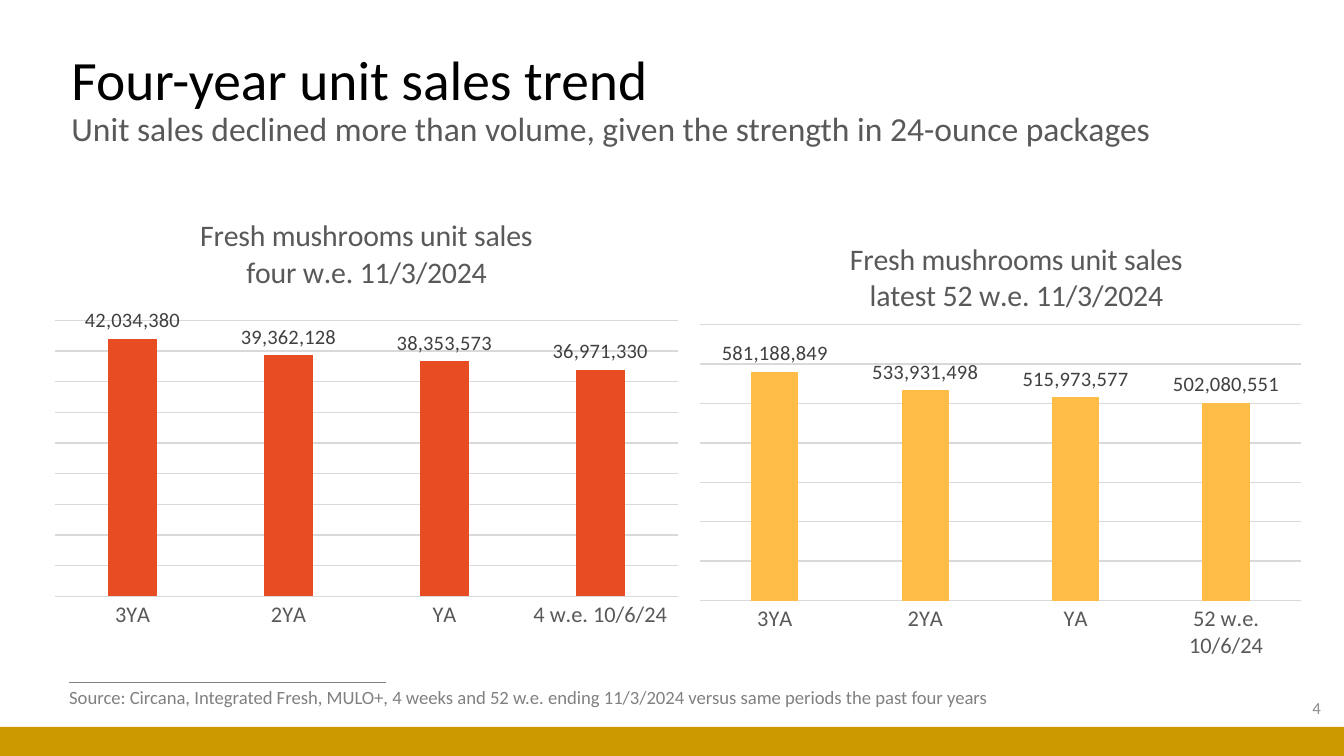
"""Build the four-year unit sales trend slide."""
from lxml import etree
from pptx import Presentation
from pptx import util as u
from pptx.chart.data import CategoryChartData
from pptx.dml.color import RGBColor
from pptx.enum import chart as ch, shapes, text
from pptx.oxml import ns

FONT = "Calibri"
BLACK = RGBColor(0x00, 0x00, 0x00)
DARK = RGBColor(0x40, 0x40, 0x40)
SLATE = RGBColor(0x59, 0x59, 0x59)
GRAY = RGBColor(0x80, 0x80, 0x80)
PALE = RGBColor(0x8C, 0x8C, 0x8C)
GRID = RGBColor(0xD9, 0xD9, 0xD9)
GOLD = RGBColor(0xCC, 0x99, 0x00)
ORANGE = RGBColor(0xE8, 0x4C, 0x22)
AMBER = RGBColor(0xFF, 0xBD, 0x47)
NUMBER = "#,##0"


def px(*lengths):
    """Turn pixel lengths into a list of EMU lengths."""
    return [u.Emu(round(length * 914400 / 134.4)) for length in lengths]


def style_font(font, size, color):
    """Set typeface, size and colour of a font."""
    font.name, font.size, font.bold = FONT, u.Pt(size), False
    font.color.rgb = color


def write(paragraph, words, size, color, align=text.PP_ALIGN.LEFT):
    """Add a formatted run to a paragraph."""
    paragraph.alignment = align
    run = paragraph.add_run()
    run.text = words
    style_font(run.font, size, color)


def style_line(line, color, width):
    """Set colour and width of a line."""
    line.color.rgb = color
    line.width = u.Pt(width)


def add_title(slide, heading, subheading):
    """Fill the title placeholder with a heading and a subheading."""
    title = slide.shapes.title
    title.left, title.top, title.width, title.height = px(58, 48, 1218, 106)
    frame = title.text_frame
    frame.word_wrap = True
    frame.auto_size = text.MSO_AUTO_SIZE.NONE
    frame.vertical_anchor = text.MSO_ANCHOR.MIDDLE
    paragraph = frame.paragraphs[0]
    paragraph.line_spacing = 0.9
    write(paragraph, heading, 29.7, BLACK)
    paragraph.add_line_break()
    write(paragraph, subheading, 18, SLATE)


def add_label(slide, box, words, wrap=True, anchor=text.MSO_ANCHOR.TOP, **style):
    """Add a one-line text box."""
    frame = slide.shapes.add_textbox(*px(*box)).text_frame
    frame.word_wrap = wrap
    frame.vertical_anchor = anchor
    write(frame.paragraphs[0], words, **style)


def add_footer(slide):
    """Draw the footnote rule and the gold band."""
    rule = slide.shapes.add_connector(
        shapes.MSO_CONNECTOR.STRAIGHT, *px(69, 683, 386, 683))
    style_line(rule.line, GRAY, 0.5)
    etree.SubElement(rule._element.spPr, ns.qn("a:effectLst"))
    band = slide.shapes.add_shape(
        shapes.MSO_SHAPE.RECTANGLE, *px(0, 727, 1344, 29))
    band.shadow.inherit = False
    band.fill.solid()
    band.fill.fore_color.rgb = GOLD
    band.line.fill.background()


def place_plot(chart, plot_box):
    """Fix the inner plot area as fractions of the chart."""
    area = chart._chartSpace.chart.plotArea
    for old in area.findall(ns.qn("c:layout")):
        area.remove(old)
    layout = etree.Element(ns.qn("c:layout"))
    manual = etree.SubElement(layout, ns.qn("c:manualLayout"))
    settings = [("layoutTarget", "inner"), ("xMode", "edge"), ("yMode", "edge")]
    for tag, value in settings + list(zip("xywh", plot_box)):
        etree.SubElement(manual, ns.qn(f"c:{tag}")).set("val", str(value))
    area.insert(0, layout)


def add_sales_chart(slide, box, heading, sales, color, top, step, plot_box):
    """Add a column chart of unit sales by period."""
    data = CategoryChartData(number_format=NUMBER)
    data.categories = list(sales)
    data.add_series("Series 1", list(sales.values()))
    chart = slide.shapes.add_chart(
        ch.XL_CHART_TYPE.COLUMN_CLUSTERED, *px(*box), data).chart
    style_font(chart.font, 10, BLACK)
    chart.has_legend = False
    chart.has_title = True
    frame = chart.chart_title.text_frame
    for index, words in enumerate(heading):
        paragraph = frame.add_paragraph() if index else frame.paragraphs[0]
        write(paragraph, words, 16, SLATE, text.PP_ALIGN.CENTER)

    periods = chart.category_axis
    periods.major_tick_mark = ch.XL_TICK_MARK.NONE
    style_font(periods.tick_labels.font, 12, SLATE)
    style_line(periods.format.line, GRID, 0.75)
    units = chart.value_axis
    units.minimum_scale, units.maximum_scale, units.major_unit = 0, top, step
    units.has_major_gridlines = True
    style_line(units.major_gridlines.format.line, GRID, 0.75)
    units.visible = False

    plot = chart.plots[0]
    plot.gap_width, plot.overlap, plot.vary_by_categories = 219, -27, False
    fill = plot.series[0].format.fill
    fill.solid()
    fill.fore_color.rgb = color
    plot.has_data_labels = True
    labels = plot.data_labels
    labels.show_value = True
    labels.position = ch.XL_LABEL_POSITION.OUTSIDE_END
    labels.number_format, labels.number_format_is_linked = NUMBER, False
    style_font(labels.font, 11, DARK)
    place_plot(chart, plot_box)


def main():
    """Assemble and save the slide."""
    deck = Presentation()
    deck.slide_width, deck.slide_height = px(1344, 756)
    slide = deck.slides.add_slide(deck.slide_layouts.get_by_name("Title Only"))
    add_footer(slide)
    add_title(slide, "Four-year unit sales trend",
              "Unit sales declined more than volume, given the strength in "
              "24-ounce packages")
    add_label(slide, (1032, 688, 302, 40), "4", size=9, color=PALE,
              anchor=text.MSO_ANCHOR.MIDDLE, align=text.PP_ALIGN.RIGHT)
    add_label(slide, (56, 679, 954, 36),
              "Source: Circana, Integrated Fresh, MULO+, 4 weeks and 52 w.e. "
              "ending 11/3/2024 versus same periods the past four years",
              wrap=False, size=10, color=GRAY)
    add_sales_chart(
        slide, (54, 196, 625, 445),
        ("Fresh mushrooms unit sales", "four w.e. 11/3/2024"),
        {"3YA": 42034380, "2YA": 39362128, "YA": 38353573,
         "4 w.e. 10/6/24": 36971330},
        ORANGE, 45_000_000, 5_000_000, (0, 0.28, 1, 0.62))
    add_sales_chart(
        slide, (699, 219, 634, 460),
        ("Fresh mushrooms unit sales", "latest 52 w.e. 11/3/2024"),
        {"3YA": 581188849, "2YA": 533931498, "YA": 515973577,
         "52 w.e. 10/6/24": 502080551},
        AMBER, 700_000_000, 100_000_000, (0, 0.23, 0.95, 0.6))
    deck.save("out.pptx")


if __name__ == "__main__":
    main()
